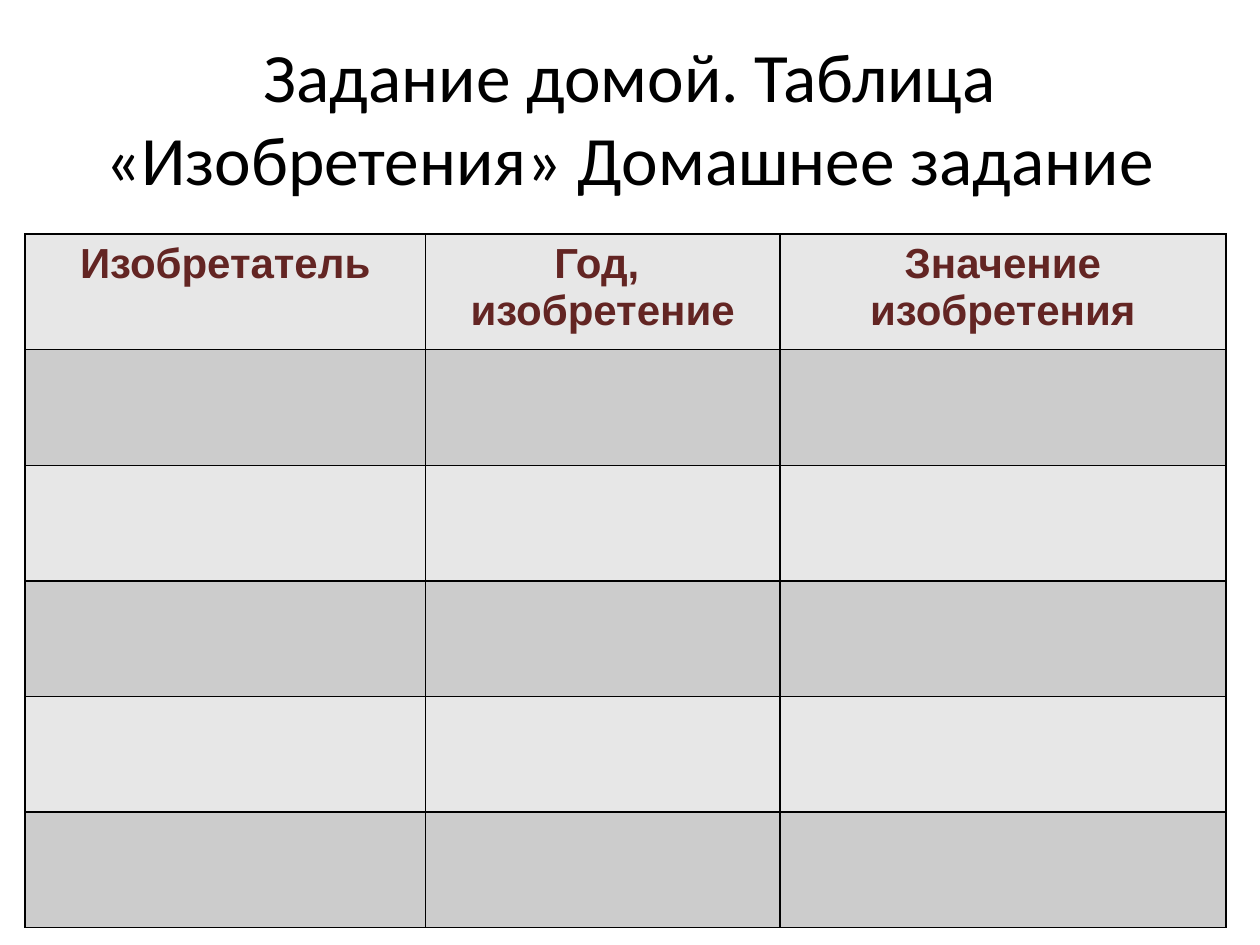
from dataclasses import dataclass

from lxml import etree
from pptx import Presentation
from pptx.dml.color import RGBColor
from pptx.enum.text import MSO_ANCHOR, PP_ALIGN
from pptx.oxml.ns import qn
from pptx.util import Cm, Pt

CENTER = PP_ALIGN.CENTER
MIDDLE = MSO_ANCHOR.MIDDLE
BLANK_LAYOUT = 6


@dataclass(frozen=True)
class Theme:
    title_font: str = "Calibri"
    table_font: str = "Arial"
    title_size: float = 39.6
    header_size: float = 24
    border_width: float = 1
    title_color: str = "000000"
    header_color: str = "632523"
    border_color: str = "000000"
    row_fills: tuple = ("E7E7E7", "CCCCCC")


THEME = Theme()
TITLE = "Задание домой. Таблица «Изобретения» Домашнее задание"
HEADERS = (
    ("Изобретатель",),
    ("Год, ", "изобретение"),
    ("Значение изобретения",),
)
COLUMN_WIDTHS = (8.08, 7.14, 8.99)
ROW_COUNT = 6
ROW_HEIGHT = 2.33


def write_lines(text_frame, lines, font_name, size, color, bold=False):
    for index, line in enumerate(lines):
        paragraph = text_frame.add_paragraph() if index else text_frame.paragraphs[0]
        paragraph.alignment = CENTER
        run = paragraph.add_run()
        run.text = line
        run.font.name = font_name
        run.font.size = Pt(size)
        run.font.bold = bold
        run.font.color.rgb = RGBColor.from_string(color)


def add_title(slide):
    shape = slide.shapes.add_textbox(Cm(1.27), Cm(0.76), Cm(22.86), Cm(3.18))
    text_frame = shape.text_frame
    text_frame.word_wrap = True
    text_frame.vertical_anchor = MIDDLE
    write_lines(text_frame, [TITLE], THEME.title_font, THEME.title_size, THEME.title_color)


def style_cell(cell, fill_color):
    properties = cell._tc.get_or_add_tcPr()
    for side in ("a:lnL", "a:lnR", "a:lnT", "a:lnB"):
        line = etree.SubElement(properties, qn(side), w=str(Pt(THEME.border_width)))
        fill = etree.SubElement(line, qn("a:solidFill"))
        etree.SubElement(fill, qn("a:srgbClr"), val=THEME.border_color)
    cell.fill.solid()
    cell.fill.fore_color.rgb = RGBColor.from_string(fill_color)


def add_inventions_table(slide):
    table = slide.shapes.add_table(
        ROW_COUNT, len(COLUMN_WIDTHS), Cm(0.5), Cm(4.72),
        Cm(sum(COLUMN_WIDTHS)), Cm(ROW_COUNT * ROW_HEIGHT),
    ).table
    for column, width in zip(table.columns, COLUMN_WIDTHS):
        column.width = Cm(width)
    for index, row in enumerate(table.rows):
        row.height = Cm(ROW_HEIGHT)
        for cell in row.cells:
            style_cell(cell, THEME.row_fills[index % 2])
    for cell, lines in zip(table.rows[0].cells, HEADERS):
        write_lines(cell.text_frame, lines, THEME.table_font,
                    THEME.header_size, THEME.header_color, bold=True)


def main():
    presentation = Presentation()
    presentation.slide_width = Cm(25.4)
    presentation.slide_height = Cm(19.05)
    slide = presentation.slides.add_slide(presentation.slide_layouts[BLANK_LAYOUT])
    add_title(slide)
    add_inventions_table(slide)
    presentation.save("out.pptx")


if __name__ == "__main__":
    main()
